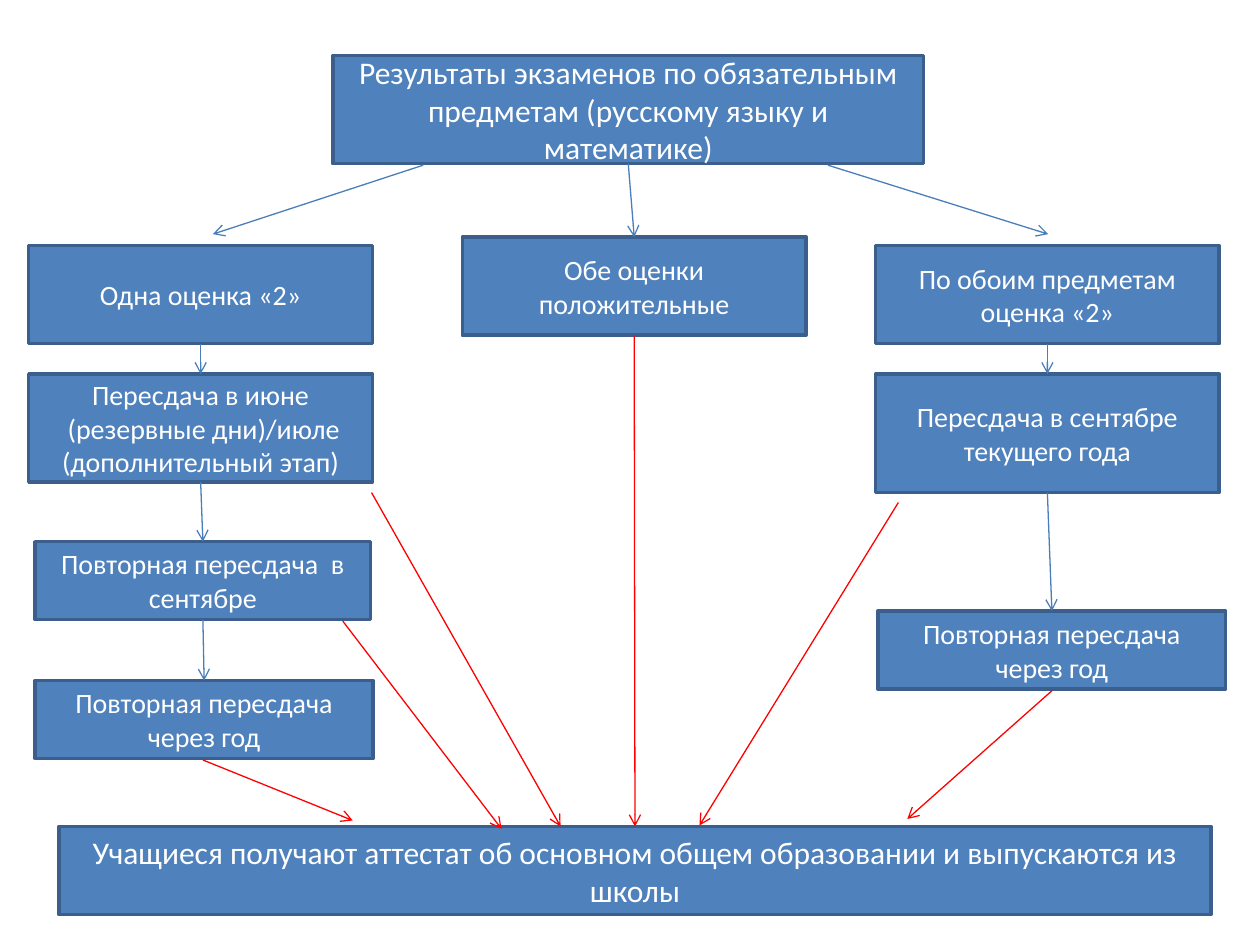
"""Builds a flowchart of the outcomes of the compulsory school exams."""
from lxml.etree import SubElement
from pptx import Presentation
from pptx.dml.color import RGBColor
from pptx.enum.shapes import MSO_CONNECTOR as Link, MSO_SHAPE as Preset
from pptx.enum.text import MSO_ANCHOR as Anchor, PP_ALIGN as Align
from pptx.oxml.ns import qn
from pptx.util import Cm, Pt

FILL, BORDER, BLUE, RED, WHITE = "4F81BD", "3A5F8C", "4A7EBB", "FF0000", "FFFFFF"
TOP, BOTTOM = 0, 2

STAGES = {
    "results": ((6.71, 1.12, 11.91, 2.18), 18,
                ["Результаты экзаменов по обязательным предметам (русскому языку и математике)"]),
    "one_fail": ((0.58, 4.95, 6.93, 1.98), 16, ["Одна оценка «2»"]),
    "passed": ((9.32, 4.78, 6.93, 1.98), 16, ["Обе оценки положительные"]),
    "two_fails": ((17.65, 4.95, 6.93, 1.98), 16, ["По обоим предметам оценка «2»"]),
    "summer": ((0.58, 7.54, 6.93, 2.18), 16,
               ["Пересдача в июне", " (резервные дни)/июле (дополнительный этап)"]),
    "september": ((17.65, 7.54, 6.93, 2.39), 16, ["Пересдача в сентябре текущего года"]),
    "certificate": ((1.19, 16.66, 23.22, 1.78), 18,
                    ["Учащиеся получают аттестат об основном общем образовании и выпускаются из школы"]),
    "right_year": ((17.7, 12.32, 7.01, 1.57), 16, ["Повторная пересдача через год"]),
    "left_september": ((0.71, 10.92, 6.76, 1.57), 16, ["Повторная пересдача  в сентябре"]),
    "left_year": ((0.71, 13.72, 6.81, 1.57), 16, ["Повторная пересдача через год"]),
}

STEPS = [
    ("results", "passed", BLUE),
    ("one_fail", "summer", BLUE),
    ("summer", "left_september", BLUE),
    ("left_september", "left_year", BLUE),
    ("two_fails", "september", BLUE),
    ("september", "right_year", BLUE),
    ("passed", "certificate", RED),
]

BRANCHES = [
    ((8.53, 3.33), (4.29, 4.72), BLUE),
    ((16.69, 3.33), (21.13, 4.72), BLUE),
    ((18.11, 10.13), (14.1, 16.64), RED),
    ((7.49, 9.93), (11.3, 16.66), RED),
    ((6.91, 12.52), (10.11, 16.71), RED),
    ((21.21, 13.92), (18.29, 16.51), RED),
    ((4.09, 15.32), (7.11, 16.54), RED),
]


def color(value):
    return RGBColor.from_string(value)


def add_stage(slide, place, size, lines):
    stage = slide.shapes.add_shape(Preset.RECTANGLE, *map(Cm, place))
    stage.shadow.inherit = False
    stage.fill.solid()
    stage.fill.fore_color.rgb = color(FILL)
    stage.line.color.rgb = color(BORDER)
    stage.line.width = Pt(2)
    frame = stage.text_frame
    frame.word_wrap = True
    frame.vertical_anchor = Anchor.MIDDLE
    for number, line in enumerate(lines):
        paragraph = frame.add_paragraph() if number else frame.paragraphs[0]
        paragraph.alignment = Align.CENTER
        run = paragraph.add_run()
        run.text = line
        run.font.name = "Calibri"
        run.font.size = Pt(size)
        run.font.color.rgb = color(WHITE)
    return stage


def add_arrow(slide, start, end, shade):
    arrow = slide.shapes.add_connector(Link.STRAIGHT, *map(Cm, start + end))
    arrow.line.color.rgb = color(shade)
    arrow.line.width = Pt(0.75)
    properties = arrow.element.spPr
    SubElement(properties.find(qn("a:ln")), qn("a:tailEnd"), type="arrow")
    SubElement(properties, qn("a:effectLst"))
    return arrow


def main():
    deck = Presentation()
    deck.slide_width, deck.slide_height = Cm(25.4), Cm(19.05)
    slide = deck.slides.add_slide(deck.slide_layouts[6])
    stages = {key: add_stage(slide, *stage) for key, stage in STAGES.items()}
    for source, target, shade in STEPS:
        arrow = add_arrow(slide, (0, 0), (0, 0), shade)
        arrow.begin_connect(stages[source], BOTTOM)
        arrow.end_connect(stages[target], TOP)
    for start, end, shade in BRANCHES:
        add_arrow(slide, start, end, shade)
    deck.save("out.pptx")


if __name__ == "__main__":
    main()
